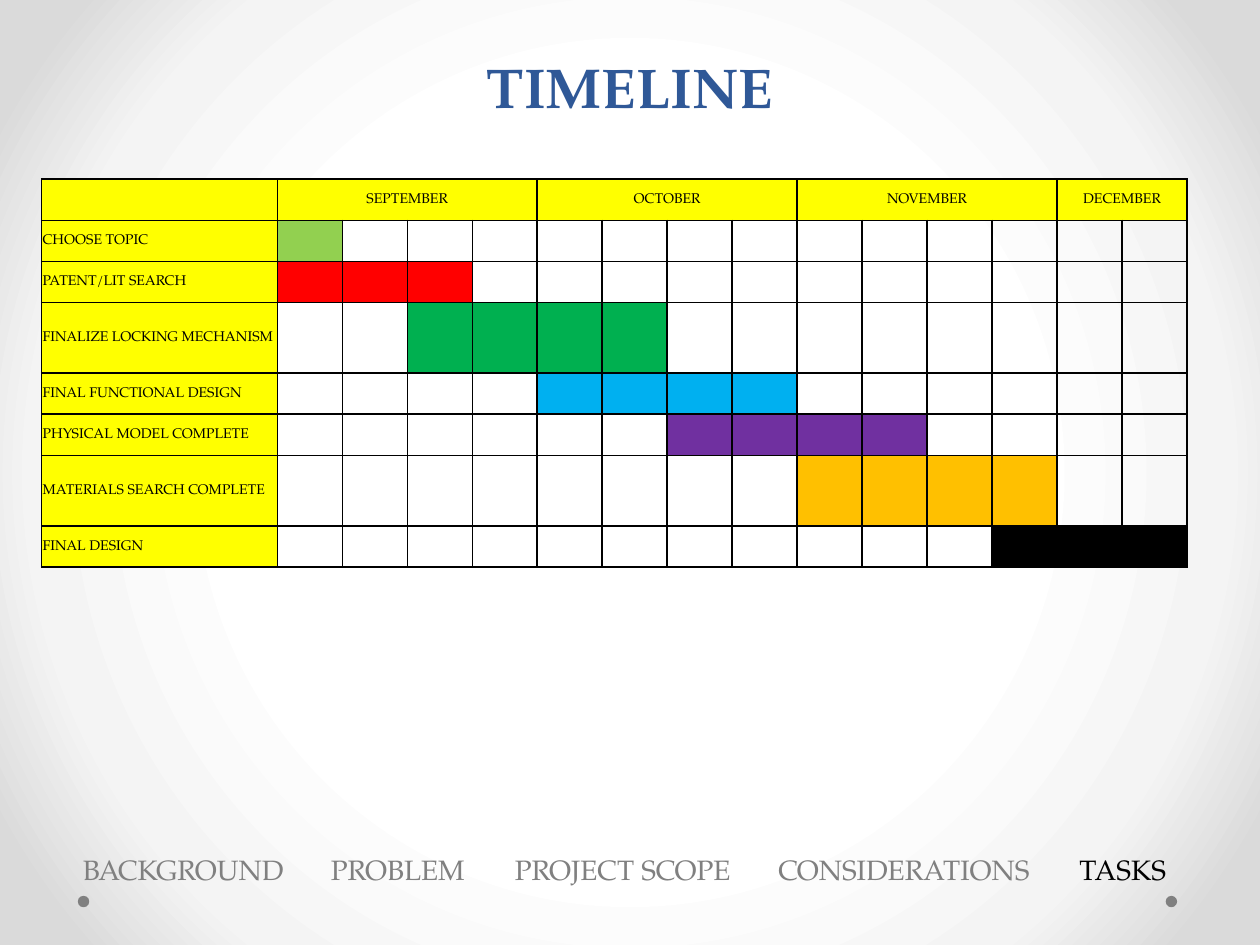
from dataclasses import dataclass
from typing import Optional

from lxml.etree import SubElement
from pptx import Presentation
from pptx.dml.color import RGBColor
from pptx.enum.shapes import MSO_SHAPE as Shp
from pptx.enum.text import MSO_ANCHOR as Anchor, PP_ALIGN as Align
from pptx.oxml import parse_xml
from pptx.oxml.ns import nsdecls, qn
from pptx.util import Cm, Pt

FONT = "TeX Gyre Pagella"
BLACK = RGBColor(0x00, 0x00, 0x00)
GRAY = RGBColor(0x80, 0x80, 0x80)
BLUE = RGBColor(0x2F, 0x58, 0x97)
YELLOW = RGBColor(0xFF, 0xFF, 0x00)
LIME = RGBColor(0x92, 0xD0, 0x50)
RED = RGBColor(0xFF, 0x00, 0x00)
GREEN = RGBColor(0x00, 0xB0, 0x50)
SKY = RGBColor(0x00, 0xB0, 0xF0)
PURPLE = RGBColor(0x70, 0x30, 0xA0)
AMBER = RGBColor(0xFF, 0xC0, 0x00)
WHITE = RGBColor(0xFF, 0xFF, 0xFF)
BACKDROP = [(50, WHITE), (76, RGBColor(0xF4, 0xF4, 0xF4)), (92, RGBColor(0xDA, 0xDA, 0xDA))]

SHORT, TALL = Cm(0.83), Cm(1.42)
LABEL_WIDTH, WEEK_WIDTH = Cm(4.75), Cm(1.31)


@dataclass
class Month:
    name: str
    weeks: int


@dataclass
class Task:
    name: str
    start: int
    weeks: int
    color: RGBColor
    height: int = SHORT


MONTHS = [Month("SEPTEMBER", 4), Month("OCTOBER", 4), Month("NOVEMBER", 4), Month("DECEMBER", 2)]
TASKS = [
    Task("CHOOSE TOPIC", 1, 1, LIME),
    Task("PATENT/LIT SEARCH", 1, 3, RED),
    Task("FINALIZE LOCKING MECHANISM", 3, 4, GREEN, TALL),
    Task("FINAL FUNCTIONAL DESIGN", 5, 4, SKY),
    Task("PHYSICAL MODEL COMPLETE", 7, 4, PURPLE),
    Task("MATERIALS SEARCH COMPLETE", 9, 4, AMBER, TALL),
    Task("FINAL DESIGN", 12, 3, BLACK),
]
SECTIONS = ["BACKGROUND", "PROBLEM", "PROJECT SCOPE", "CONSIDERATIONS", "TASKS"]
SECTION_TABS = [Cm(5), Cm(8.71), Cm(14.02), Cm(20.09)]


def set_font(font, size: int, color: RGBColor, bold: bool = False) -> None:
    font.name, font.size, font.bold = FONT, Pt(size), bold
    font.color.rgb = color


def set_backdrop(s) -> None:
    stops = "".join(
        f'<a:gs pos="{pos * 1000}"><a:srgbClr val="{color}"/></a:gs>' for pos, color in BACKDROP
    )
    bg = parse_xml(
        f'<p:bg {nsdecls("p", "a")}><p:bgPr><a:gradFill rotWithShape="1"><a:gsLst>{stops}</a:gsLst>'
        '<a:path path="circle"><a:fillToRect l="50000" t="50000" r="50000" b="50000"/></a:path>'
        "</a:gradFill><a:effectLst/></p:bgPr></p:bg>"
    )
    s.element.cSld.insert(0, bg)


def add_dot(s, left: int) -> None:
    dot = s.shapes.add_shape(Shp.OVAL, left, Cm(18.06), Cm(0.23), Cm(0.23))
    dot.shadow.inherit = False
    dot.fill.solid()
    dot.fill.fore_color.rgb = GRAY
    dot.line.fill.background()


def add_title(s, text: str) -> None:
    title = s.shapes.title
    title.left, title.top, title.width, title.height = Cm(1.27), Cm(-1.9), Cm(22.86), Cm(4.44)
    tf = title.text_frame
    tf.text = text
    tf.vertical_anchor = Anchor.BOTTOM
    p = tf.paragraphs[0]
    p.alignment = Align.CENTER
    p.line_spacing = Pt(58)
    set_font(p.font, 32, BLUE, bold=True)


def format_cell(cell, fill: Optional[RGBColor] = None, text: str = "", align=Align.LEFT) -> None:
    cell.margin_left = cell.margin_right = cell.margin_top = Cm(0.02)
    cell.margin_bottom = 0
    cell.vertical_anchor = Anchor.MIDDLE
    cell.text = text
    p = cell.text_frame.paragraphs[0]
    p.alignment = align
    set_font(p.font, 8, BLACK)
    tcPr = cell._tc.get_or_add_tcPr()
    for side in ("a:lnL", "a:lnR", "a:lnT", "a:lnB"):
        ln = SubElement(tcPr, qn(side), w=str(Pt(1)))
        solid = SubElement(ln, qn("a:solidFill"))
        SubElement(solid, qn("a:srgbClr"), val=str(BLACK))
    if fill is None:
        cell.fill.background()
    else:
        cell.fill.solid()
        cell.fill.fore_color.rgb = fill


def add_schedule(s) -> None:
    weeks = sum(m.weeks for m in MONTHS)
    heights = [SHORT] + [t.height for t in TASKS]
    table = s.shapes.add_table(
        len(heights), weeks + 1, Cm(0.84), Cm(3.61), LABEL_WIDTH + weeks * WEEK_WIDTH, sum(heights)
    ).table
    table.first_row = table.horz_banding = False
    for row, height in zip(table.rows, heights):
        row.height = height
    for i, column in enumerate(table.columns):
        column.width = WEEK_WIDTH if i else LABEL_WIDTH

    format_cell(table.cell(0, 0), YELLOW)
    col = 1
    for month in MONTHS:
        last = col + month.weeks - 1
        for c in range(col, last + 1):
            format_cell(table.cell(0, c), YELLOW, month.name if c == col else "", Align.CENTER)
        table.cell(0, col).merge(table.cell(0, last))
        col = last + 1

    for r, task in enumerate(TASKS, start=1):
        format_cell(table.cell(r, 0), YELLOW, task.name)
        for week in range(1, weeks + 1):
            active = task.start <= week < task.start + task.weeks
            format_cell(table.cell(r, week), task.color if active else None)


def add_navigation(s, current: str) -> None:
    tf = s.shapes.add_textbox(Cm(0.43), Cm(17.07), Cm(24.33), Cm(0.94)).text_frame
    tf.word_wrap = True
    tf.margin_left = Cm(1.24)
    p = tf.paragraphs[0]
    tabs = SubElement(p._p.get_or_add_pPr(), qn("a:tabLst"))
    for pos in SECTION_TABS:
        SubElement(tabs, qn("a:tab"), pos=str(pos), algn="l")
    for i, section in enumerate(SECTIONS):
        r = p.add_run()
        r.text = f"\t{section}" if i else section
        set_font(r.font, 16, BLACK if section == current else GRAY)


def main() -> None:
    prs = Presentation()
    prs.slide_width, prs.slide_height = Cm(25.4), Cm(19.05)
    s = prs.slides.add_slide(prs.slide_layouts[5])
    set_backdrop(s)
    for left in (Cm(23.5), Cm(1.57)):
        add_dot(s, left)
    add_title(s, "TIMELINE")
    add_schedule(s)
    add_navigation(s, "TASKS")
    prs.save("out.pptx")


if __name__ == "__main__":
    main()
